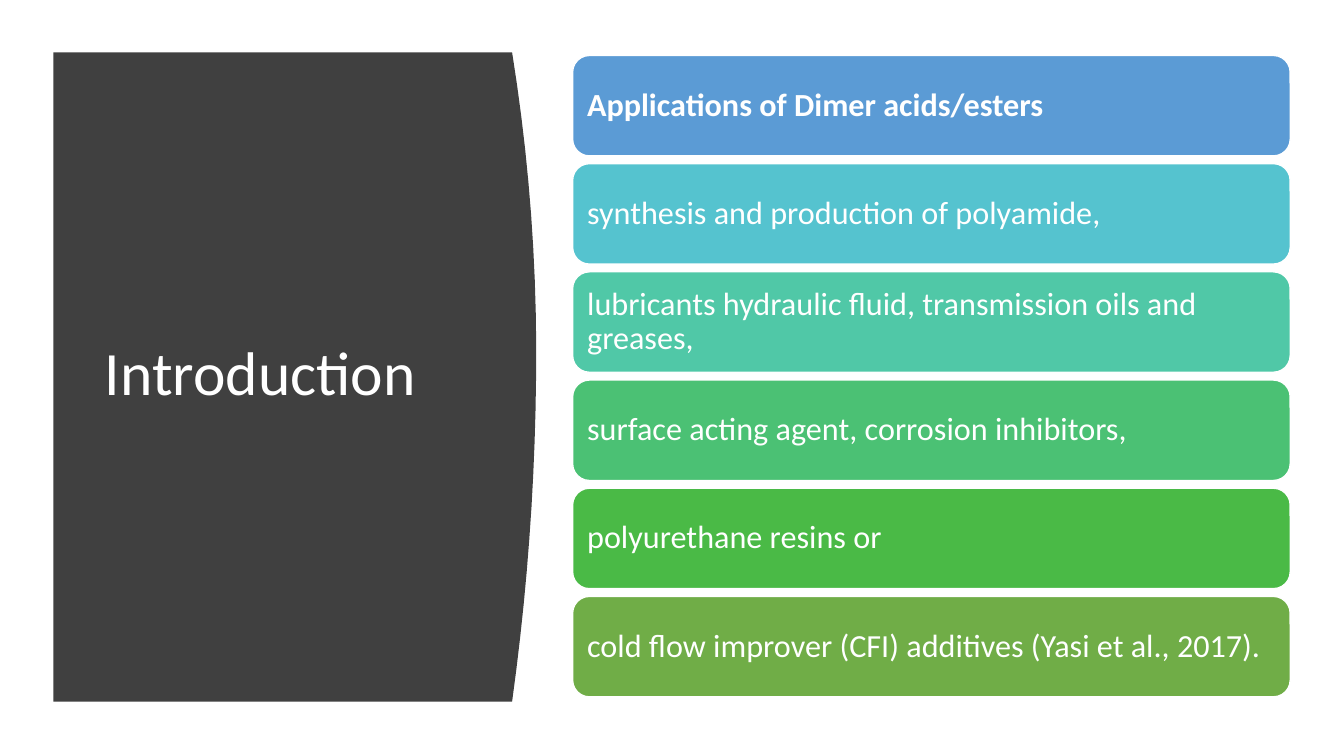
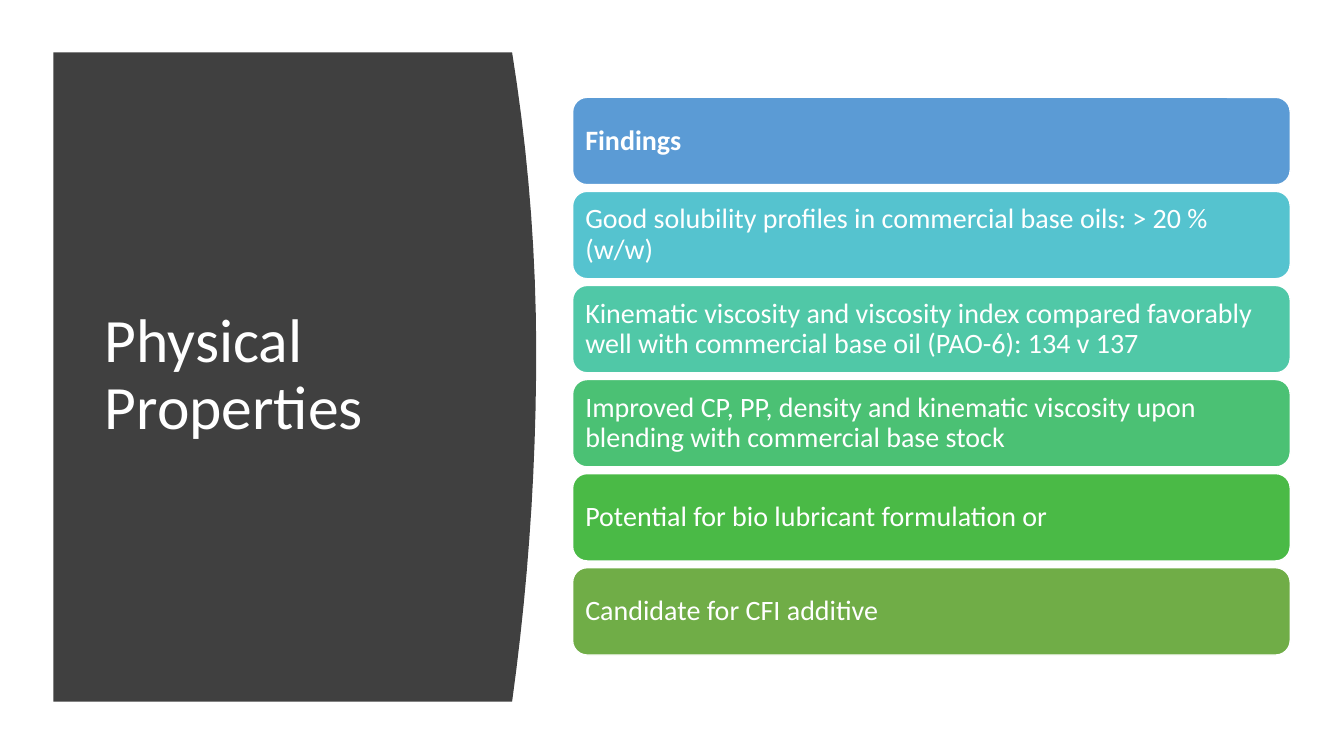
"""Build two slides with a curved title panel and a stack of coloured cards."""
from pptx import Presentation
from pptx.dml.color import RGBColor
from pptx.enum.shapes import MSO_SHAPE as SHAPE
from pptx.enum.text import MSO_ANCHOR as ANCHOR, MSO_AUTO_SIZE as AUTO, PP_ALIGN as ALIGN
from pptx.util import Pt

FONT = "Calibri"
COLORS = {"panel": "404040", "white": "FFFFFF"}
CARD_COLORS = {
    "blue": "5B9BD5",
    "cyan": "55C3CF",
    "teal": "50C8A7",
    "mint": "4BC174",
    "green": "4ABA46",
    "olive": "70AD47",
}
PANEL_LEFT, PANEL_EDGE, PANEL_CROWN = 38.2, 365.8, 383
PANEL_TOP, PANEL_MID, PANEL_BOTTOM = 37.4, 252, 501.2
CURVE_STEPS = 20
CARD_LEFT, CARD_WIDTH, STACK_MID = 409, 512.6, 268.7

SLIDES = [
    ("Introduction", 23, [
        "Applications of Dimer acids/esters",
        "synthesis and production of polyamide,",
        "lubricants hydraulic fluid, transmission oils and greases,",
        "surface acting agent, corrosion inhibitors,",
        "polyurethane resins or",
        "cold flow improver (CFI) additives (Yasi et al., 2017).",
    ]),
    ("Physical Properties", 20, [
        "Findings",
        "Good solubility profiles in commercial base oils: > 20 % (w/w)",
        "Kinematic viscosity and viscosity index compared favorably well "
        "with commercial base oil (PAO-6): 134 v 137",
        "Improved CP, PP, density and kinematic viscosity upon blending "
        "with commercial base stock",
        "Potential for bio lubricant formulation or",
        "Candidate for CFI additive",
    ]),
]


def write(sp, text, size, bold=False):
    tf = sp.text_frame
    tf.word_wrap = True
    tf.auto_size = AUTO.NONE
    tf.vertical_anchor = ANCHOR.MIDDLE
    p = tf.paragraphs[0]
    p.alignment = ALIGN.LEFT
    p.line_spacing = 0.9
    r = p.add_run()
    r.text = text
    r.font.name, r.font.size, r.font.bold = FONT, Pt(size), bold
    r.font.color.rgb = RGBColor.from_string(COLORS["white"])
    return tf


def paint(sp, color):
    sp.shadow.inherit = False
    sp.fill.solid()
    sp.fill.fore_color.rgb = RGBColor.from_string(color)


prs = Presentation()
prs.slide_width, prs.slide_height = Pt(960), Pt(540)
layout = prs.slide_layouts.get_by_name("Title Only")
title = layout.placeholders[0]
title.left, title.top, title.width, title.height = Pt(67.7), Pt(79.9), Pt(269.3), Pt(377.3)

curve = []
for i in range(CURVE_STEPS + 1):
    y = PANEL_TOP + (PANEL_BOTTOM - PANEL_TOP) * i / CURVE_STEPS
    end = PANEL_TOP if y < PANEL_MID else PANEL_BOTTOM
    bend = ((y - PANEL_MID) / (end - PANEL_MID)) ** 2
    curve.append((Pt(PANEL_CROWN - (PANEL_CROWN - PANEL_EDGE) * bend), Pt(y)))

for heading, size, lines in SLIDES:
    s = prs.slides.add_slide(layout)
    write(s.shapes.title, heading, 44)

    builder = s.shapes.build_freeform(Pt(PANEL_LEFT), Pt(PANEL_TOP))
    builder.add_line_segments(curve + [(Pt(PANEL_LEFT), Pt(PANEL_BOTTOM))])
    panel = builder.convert_to_shape()
    paint(panel, COLORS["panel"])
    panel.line.fill.background()
    s.shapes.title.element.addprevious(panel.element)

    height, gap, inset = 3.12 * size, 0.24 * size, 0.3 * size
    top = STACK_MID - (len(lines) * (height + gap) - gap) / 2
    for i, (text, color) in enumerate(zip(lines, CARD_COLORS.values())):
        y = top + i * (height + gap)
        card = s.shapes.add_shape(
            SHAPE.ROUNDED_RECTANGLE, Pt(CARD_LEFT), Pt(y), Pt(CARD_WIDTH), Pt(height))
        paint(card, color)
        card.line.color.rgb = RGBColor.from_string(COLORS["white"])
        card.line.width = Pt(1)
        tf = write(card, text, size, bold=i == 0)
        tf.margin_left = tf.margin_right = tf.margin_top = tf.margin_bottom = Pt(inset)

prs.save("out.pptx")
